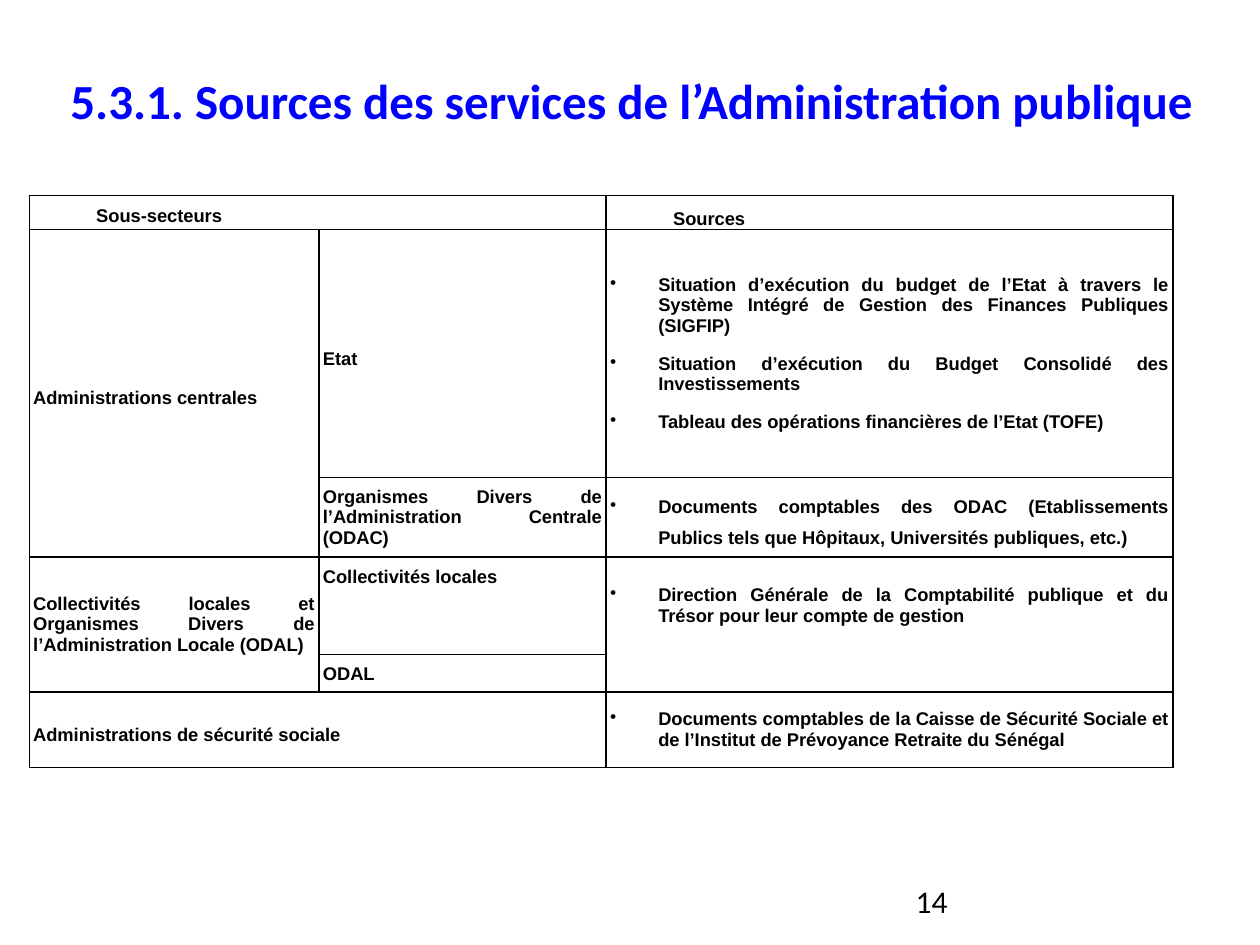
from lxml.etree import SubElement
from pptx import Presentation
from pptx.dml.color import RGBColor
from pptx.enum.text import MSO_ANCHOR as Anchor, PP_ALIGN as Align
from pptx.oxml import parse_xml
from pptx.oxml.ns import nsdecls, qn
from pptx.util import Cm, Pt

TITLE = "5.3.1. Sources des services de l’Administration publique"
PAGE_NUMBER = "14"
COLUMNS = [5.84, 5.79, 11.43]
ROWS = [0.69, 5, 1.6, 1.96, 0.76, 1.52]
BULLET_INDENT = 0.97

# (row, column, paragraphs, format)
CELLS = [
    (0, 0, ["Sous-secteurs"], dict(span=(1, 2), anchor=Anchor.TOP, indent=1.27)),
    (0, 2, ["Sources"], dict(anchor=Anchor.BOTTOM, indent=1.27)),
    (1, 0, ["Administrations centrales"], dict(span=(2, 1))),
    (1, 1, ["Etat"], {}),
    (1, 2, ["Situation d’exécution du budget de l’Etat à travers le Système "
            "Intégré de Gestion des Finances Publiques (SIGFIP)",
            "Situation d’exécution du Budget Consolidé des Investissements",
            "Tableau des opérations financières de l’Etat (TOFE)"],
     dict(bullet=True, spacing=1)),
    (2, 1, ["Organismes Divers de l’Administration Centrale (ODAC)"], dict(spacing=1)),
    (2, 2, ["Documents comptables des ODAC (Etablissements Publics tels que "
            "Hôpitaux, Universités publiques, etc.)"], dict(bullet=True)),
    (3, 0, ["Collectivités locales et Organismes Divers de l’Administration "
            "Locale (ODAL)"], dict(span=(2, 1), spacing=1)),
    (3, 1, ["Collectivités locales"], dict(anchor=Anchor.TOP)),
    (3, 2, ["Direction Générale de la Comptabilité publique et du Trésor pour "
            "leur compte de gestion"], dict(bullet=True, spacing=1)),
    (4, 1, ["ODAL"], dict(anchor=Anchor.TOP)),
    (4, 2, [""], dict(spacing=1)),
    (5, 0, ["Administrations de sécurité sociale"], dict(span=(1, 2))),
    (5, 2, ["Documents comptables de la Caisse de Sécurité Sociale et de "
            "l’Institut de Prévoyance Retraite du Sénégal"],
     dict(bullet=True, spacing=1)),
]
OPEN_SIDES = {(3, 2): "B", (4, 2): "T"}


def color(hex_code):
    return RGBColor.from_string(hex_code)


def write(frame, paragraphs, font="Arial", size=10.5, bold=True, fill="000000",
          align=Align.JUSTIFY, spacing=1.5, after=10, indent=0, bullet=False):
    frame.word_wrap = True
    for number, text in enumerate(paragraphs):
        para = frame.add_paragraph() if number else frame.paragraphs[0]
        props = para._p.get_or_add_pPr()
        if bullet:
            hang = Cm(BULLET_INDENT)
            props.set("marL", str(hang))
            props.set("indent", str(-hang))
            SubElement(props, qn("a:buChar"), char="•")
            tabs = SubElement(props, qn("a:tabLst"))
            SubElement(tabs, qn("a:tab"), pos=str(Cm(1.27)), algn="l")
        elif indent:
            props.set("marL", str(Cm(indent)))
        para.alignment = align
        para.line_spacing = spacing
        para.space_after = Pt(after)
        span = para.add_run()
        span.text = text
        span.font.name, span.font.size, span.font.bold = font, Pt(size), bold
        span.font.color.rgb = color(fill)


def set_borders(cell, open_side=""):
    props = cell._tc.get_or_add_tcPr()
    for position, side in enumerate("LRTB"):
        paint = ("<a:noFill/>" if side == open_side else
                 '<a:solidFill><a:srgbClr val="000000"/></a:solidFill>')
        props.insert(position, parse_xml(
            f'<a:ln{side} {nsdecls("a")} w="{Pt(1)}">{paint}</a:ln{side}>'))


def add_text(page, place, text, anchor, **style):
    box = page.shapes.add_textbox(*map(Cm, place))
    box.text_frame.vertical_anchor = anchor
    write(box.text_frame, [text], font="Calibri", spacing=1, after=0, **style)


deck = Presentation()
deck.slide_width, deck.slide_height = Cm(25.4), Cm(19.05)
page = deck.slides.add_slide(deck.slide_layouts[6])

# Page number
add_text(page, (18.21, 17.65, 5.92, 1.02), PAGE_NUMBER, Anchor.MIDDLE,
         size=18, bold=False, align=Align.LEFT)

# Table of sources
table = page.shapes.add_table(len(ROWS), len(COLUMNS), Cm(0.59), Cm(3.94),
                              Cm(sum(COLUMNS)), Cm(sum(ROWS))).table
table.first_row = table.horz_banding = False
for column, width in zip(table.columns, COLUMNS):
    column.width = Cm(width)
for row, height in zip(table.rows, ROWS):
    row.height = Cm(height)
for row in range(len(ROWS)):
    for column in range(len(COLUMNS)):
        cell = table.cell(row, column)
        cell.fill.background()
        cell.margin_left = cell.margin_right = Cm(0.08)
        cell.margin_top = cell.margin_bottom = 0
        set_borders(cell, OPEN_SIDES.get((row, column), ""))

for row, column, paragraphs, style in CELLS:
    style = dict(style)
    rows, columns = style.pop("span", (1, 1))
    cell = table.cell(row, column)
    if rows * columns > 1:
        cell.merge(table.cell(row + rows - 1, column + columns - 1))
    cell.vertical_anchor = style.pop("anchor", Anchor.MIDDLE)
    write(cell.text_frame, paragraphs, **style)

# Title
add_text(page, (0.74, 1.3, 23.98, 0.94), TITLE, Anchor.TOP,
         size=28, fill="0000FF", align=Align.CENTER)

deck.save("out.pptx")
